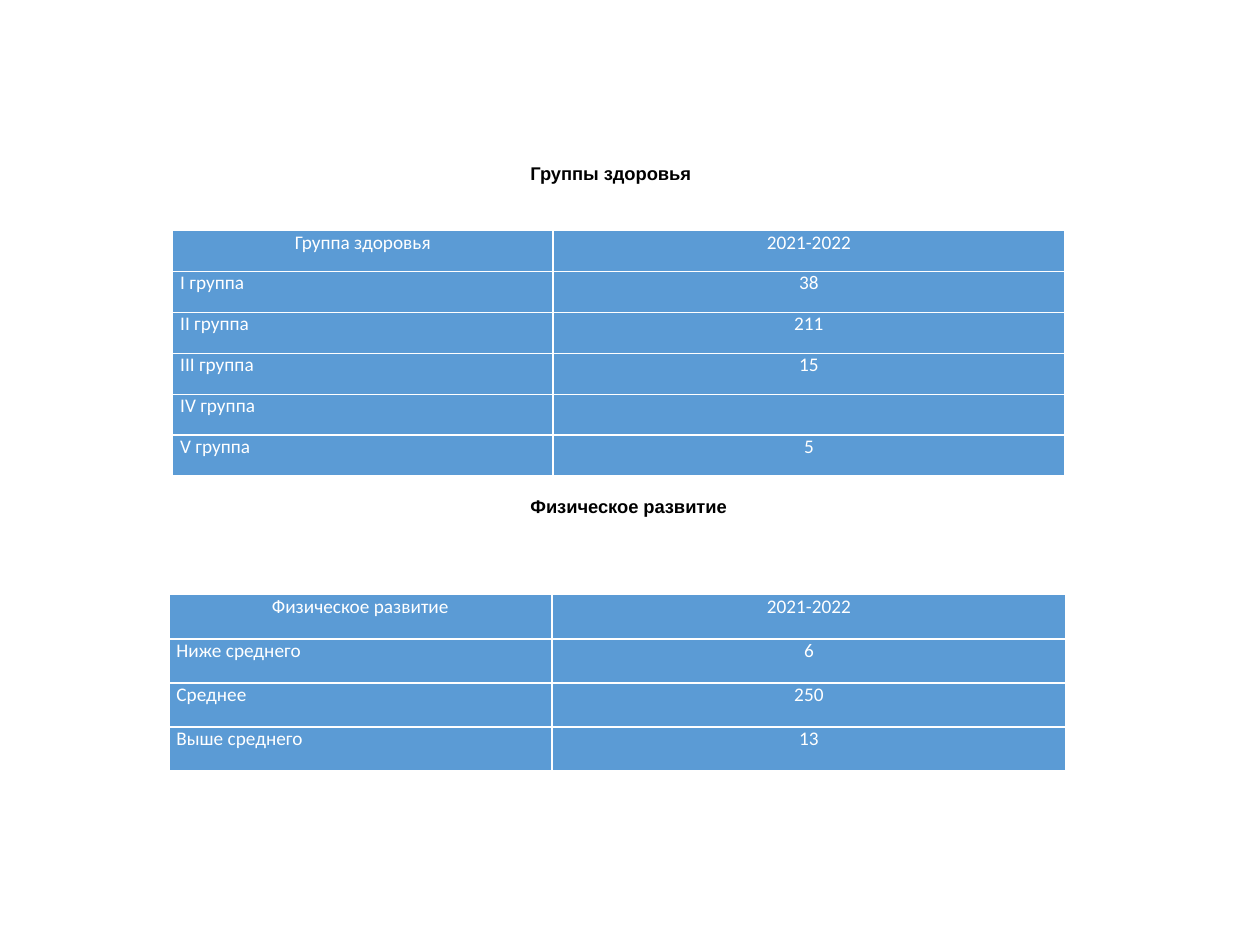
from dataclasses import dataclass
from typing import Any

from lxml import etree
from pptx import Presentation
from pptx.dml.color import RGBColor
from pptx.enum.text import MSO_ANCHOR, PP_ALIGN
from pptx.oxml.ns import qn
from pptx.util import Inches, Pt

WIDTH, HEIGHT = Inches(10), Inches(7.5)
BLUE = RGBColor(0x5B, 0x9B, 0xD5)
WHITE = RGBColor(0xFF, 0xFF, 0xFF)
BLACK = RGBColor(0x00, 0x00, 0x00)
CENTER, JUSTIFY = PP_ALIGN.CENTER, PP_ALIGN.JUSTIFY
TOP = MSO_ANCHOR.TOP
SIDES = ("a:lnL", "a:lnR", "a:lnT", "a:lnB")

YEARS = "2021-2022"
HEALTH_GROUPS = [
    ("Группа здоровья", YEARS),
    ("I группа", "38"),
    ("II группа", "211"),
    ("III группа", "15"),
    ("IV группа", ""),
    ("V группа", "5"),
]
PHYSICAL_DEVELOPMENT = [
    ("Физическое развитие", YEARS),
    ("Ниже среднего", "6"),
    ("Среднее", "250"),
    ("Выше среднего", "13"),
]


@dataclass
class ReportSlide:
    slide: Any
    heading_font: str = "Arial"
    heading_size: float = 10.5
    table_font: str = "Calibri"
    table_size: float = 11
    border: float = 1

    def style(self, paragraph, name, size, color, bold):
        font = paragraph.font
        font.name, font.size, font.bold = name, Pt(size), bold
        font.color.rgb = color

    def heading(self, text, left, top, width, height):
        box = self.slide.shapes.add_textbox(
            int(left * WIDTH), int(top * HEIGHT), int(width * WIDTH), int(height * HEIGHT))
        frame = box.text_frame
        frame.word_wrap = True
        frame.vertical_anchor = TOP
        frame.margin_left = frame.margin_right = Inches(0.07)
        frame.margin_top = frame.margin_bottom = Inches(0.04)
        frame.text = text
        self.style(frame.paragraphs[0], self.heading_font, self.heading_size, BLACK, True)

    def outline(self, cell):
        properties = cell._tc.get_or_add_tcPr()
        for index, side in enumerate(SIDES):
            line = etree.Element(qn(side), w=str(Pt(self.border)))
            fill = etree.SubElement(line, qn("a:solidFill"))
            etree.SubElement(fill, qn("a:srgbClr"), val=str(WHITE))
            properties.insert(index, line)

    def cell(self, cell, text, align):
        cell.margin_left = cell.margin_right = Inches(0.06)
        cell.margin_top = cell.margin_bottom = 0
        cell.fill.solid()
        cell.fill.fore_color.rgb = BLUE
        self.outline(cell)
        cell.text = text
        paragraph = cell.text_frame.paragraphs[0]
        paragraph.alignment = align
        self.style(paragraph, self.table_font, self.table_size, WHITE, False)

    def table(self, rows, left, top, columns, row_height):
        frame = self.slide.shapes.add_table(
            len(rows), len(columns), int(left * WIDTH), int(top * HEIGHT),
            int(sum(columns) * WIDTH), int(len(rows) * row_height * HEIGHT))
        table = frame.table
        table.first_row = table.horz_banding = False
        for column, share in zip(table.columns, columns):
            column.width = int(share * WIDTH)
        for r, values in enumerate(rows):
            table.rows[r].height = int(row_height * HEIGHT)
            for c, value in enumerate(values):
                is_label = r > 0 and c == 0
                self.cell(table.cell(r, c), value, JUSTIFY if is_label else CENTER)


def main():
    deck = Presentation()
    deck.slide_width, deck.slide_height = WIDTH, HEIGHT
    report = ReportSlide(deck.slides.add_slide(deck.slide_layouts[6]))
    report.table(HEALTH_GROUPS, 0.137, 1.83 / 7.5, (0.302, 0.406), 0.325 / 7.5)
    report.heading("Группы здоровья", 0.414, 1.25 / 7.5, 0.166, 0.48 / 7.5)
    report.table(PHYSICAL_DEVELOPMENT, 0.134, 4.72 / 7.5, (0.304, 0.408), 0.35 / 7.5)
    report.heading("Физическое развитие", 0.414, 3.89 / 7.5, 0.175, 0.48 / 7.5)
    deck.save("out.pptx")


if __name__ == "__main__":
    main()
